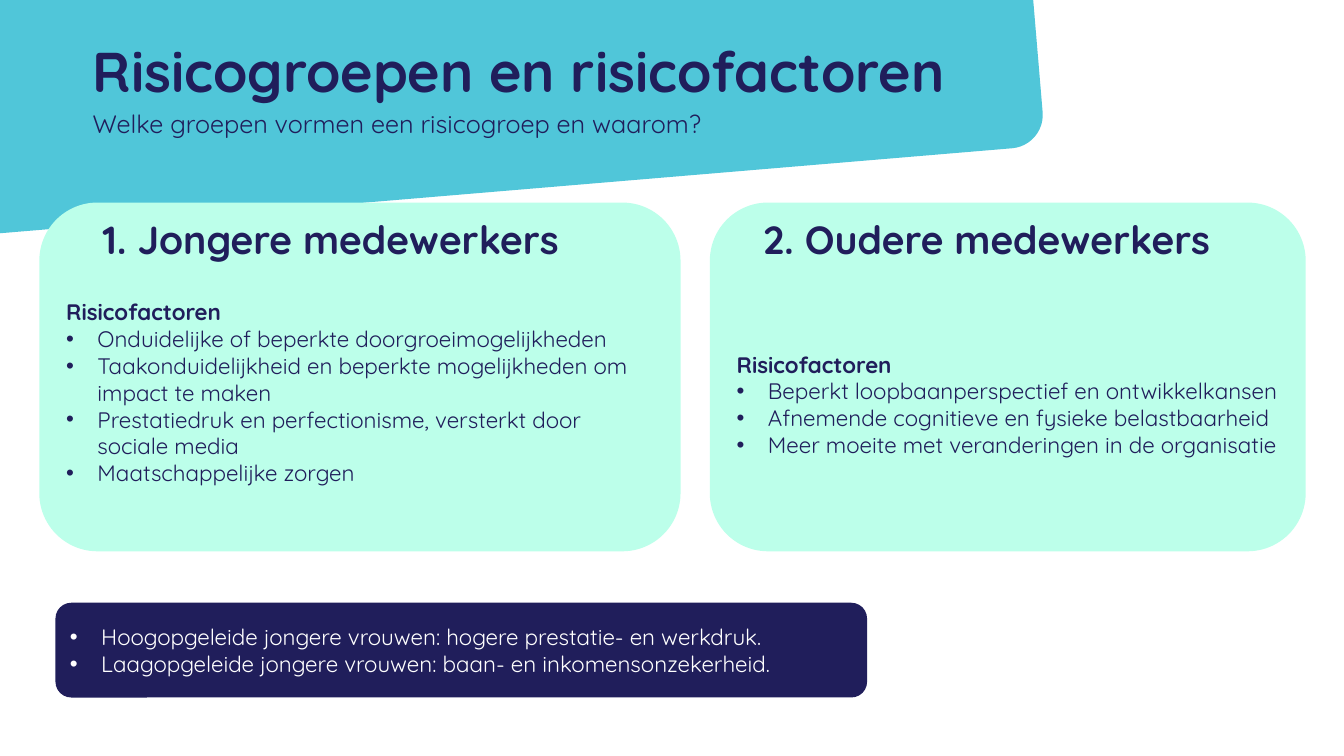
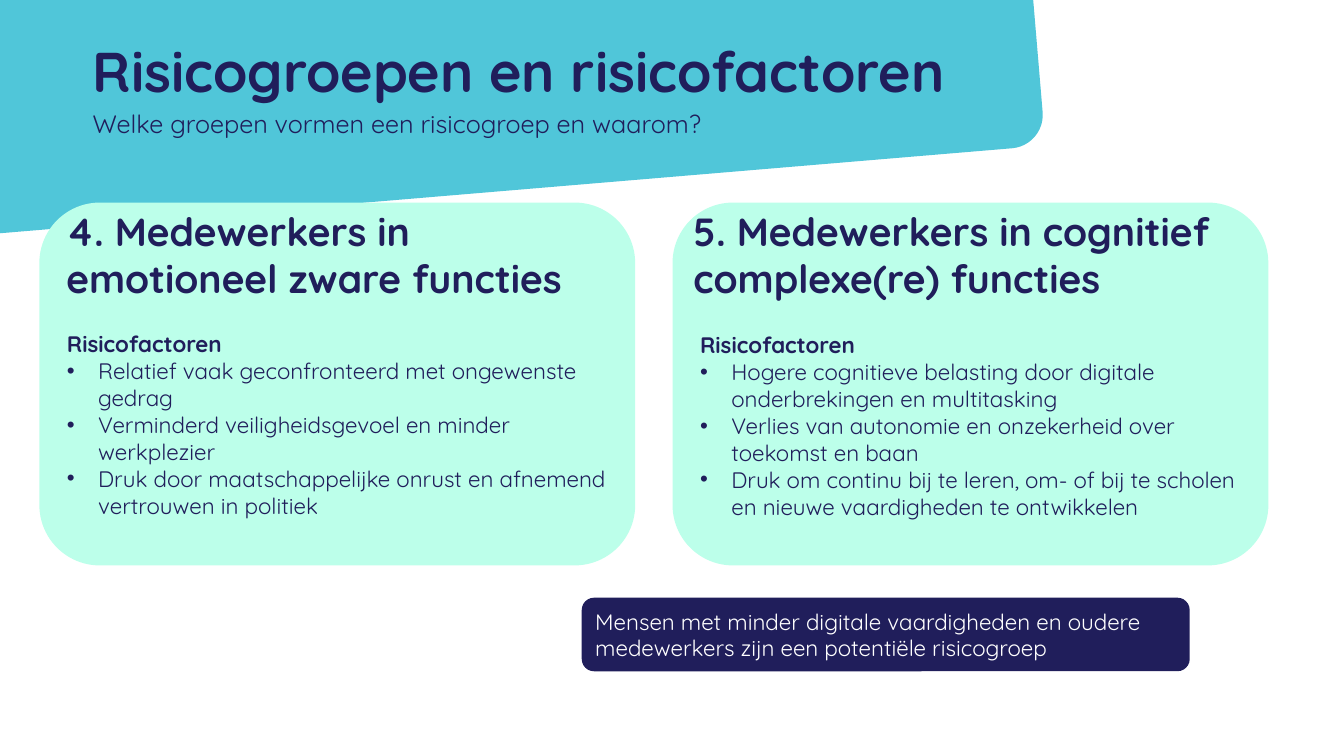
from lxml import etree
from pptx import Presentation
from pptx import util as u
from pptx.dml.color import RGBColor
from pptx.enum import shapes, text
from pptx.oxml import ns

NAVY, TEAL, MINT, WHITE = "201E5B", "50C6D9", "BCFFEA", "FFFFFF"
FACE = "Quicksand"
TITLE = "Risicogroepen en risicofactoren"
LEAD = "Welke groepen vormen een risicogroep en waarom?"
LEFT, CENTER = text.PP_ALIGN.LEFT, text.PP_ALIGN.CENTER
CORNER = 1 / 6  # default corner radius, as a share of the short side


def color(code):
    return RGBColor.from_string(code)


def place(shape, box):
    shape.left, shape.top, shape.width, shape.height = map(u.Inches, box)


def bullet(para):
    props = para._p.get_or_add_pPr()
    props.set("marL", str(u.Inches(0.31)))
    props.set("indent", str(u.Inches(-0.31)))
    etree.SubElement(props, ns.qn("a:buFont")).set("typeface", "Arial")
    etree.SubElement(props, ns.qn("a:buChar")).set("char", "•")


def style(para, size, tint=NAVY, bold=False, align=LEFT):
    para.alignment = align
    font = para.font
    font.name, font.size, font.bold = FACE, u.Pt(size), bold
    font.color.rgb = color(tint)


def setup(frame, anchor, inset=None):
    frame.word_wrap = True
    frame.auto_size = text.MSO_AUTO_SIZE.NONE
    frame.vertical_anchor = anchor
    if inset is not None:
        frame.margin_left = frame.margin_right = u.Inches(inset)
        frame.margin_top = frame.margin_bottom = u.Inches(inset)


def write(frame, lines, bullets=True, **look):
    """Fill the frame with lines, one paragraph each."""
    for i, line in enumerate(lines):
        para = frame.paragraphs[0] if i == 0 else frame.add_paragraph()
        para.text = line
        if bullets:
            bullet(para)
        style(para, **look)


def block(slide, box, fill):
    """Rounded block without line or shadow."""
    shape = slide.shapes.add_shape(
        shapes.MSO_SHAPE.ROUNDED_RECTANGLE, *map(u.Inches, box))
    shape.shadow.inherit = False
    shape.fill.solid()
    shape.fill.fore_color.rgb = color(fill)
    shape.line.fill.background()
    return shape


def label(slide, box, line, inset=None, **look):
    area = slide.shapes.add_textbox(*map(u.Inches, box))
    setup(area.text_frame, text.MSO_ANCHOR.TOP, inset)
    write(area.text_frame, [line], bullets=False, **look)
    return area


def header(slide):
    """Tilted band with title and lead line."""
    title = slide.shapes.title
    place(title, (0.92, 0.36, 11.5, 0.79))
    setup(title.text_frame, text.MSO_ANCHOR.TOP, 0)
    write(title.text_frame, [TITLE], bullets=False, size=40, bold=True)

    band = block(slide, (-1, -0.92, 11.27, 2.84), TEAL)
    band.adjustments[0] = 0.117
    band.rotation = 355.2
    title.element.addprevious(band.element)  # band goes behind the title

    lead = label(slide, (0.92, 1.11, 11.5, 0.79), LEAD, inset=0, size=18)
    lead.text_frame.paragraphs[0].line_spacing = 0.9


def panel(slide, box, drop, risks, head, spot, align=LEFT):
    """Risk group: drop is the gap above the list, spot the heading's box
    relative to the panel."""
    x, y, _, h = box
    frame = block(slide, box, MINT).text_frame
    setup(frame, text.MSO_ANCHOR.TOP)
    # The text area of a rounded block starts inside its corner arc
    frame.margin_top = u.Inches(drop - h * CORNER * (1 - 0.5 ** 0.5))
    write(frame, ["Risicofactoren"], bullets=False, size=16, bold=True)
    for risk in risks:
        para = frame.add_paragraph()
        para.text = risk
        bullet(para)
        style(para, 16)
    dx, dy, wide, high = spot
    label(slide, (x + dx, y + dy, wide, high), head,
          size=28, bold=True, align=align)


def note(slide, box, lines, bullets):
    """Dark remark box."""
    frame = block(slide, box, NAVY).text_frame
    setup(frame, text.MSO_ANCHOR.MIDDLE)
    write(frame, lines, bullets, size=16, tint=WHITE)


def page(deck, panels, remark):
    slide = deck.slides.add_slide(deck.slide_layouts[5])
    header(slide)
    for group in panels:
        panel(slide, **group)
    note(slide, **remark)


PAGES = [
    ([dict(box=(0.39, 2.01, 6.36, 3.46), drop=0.95,
           head="1. Jongere medewerkers",
           spot=(0.13, 0.08, 5.52, 0.57), align=CENTER,
           risks=["Onduidelijke of beperkte doorgroeimogelijkheden",
                  "Taakonduidelijkheid en beperkte mogelijkheden om "
                  "impact te maken",
                  "Prestatiedruk en perfectionisme, versterkt door "
                  "sociale media",
                  "Maatschappelijke zorgen"]),
      dict(box=(7.04, 2.01, 5.91, 3.46), drop=1.47,
           head="2. Oudere medewerkers",
           spot=(0.3, 0.08, 4.89, 0.57), align=CENTER,
           risks=["Beperkt loopbaanperspectief en ontwikkelkansen",
                  "Afnemende cognitieve en fysieke belastbaarheid",
                  "Meer moeite met veranderingen in de organisatie"])],
     dict(box=(0.55, 5.98, 8.05, 0.94), bullets=True,
          lines=["Hoogopgeleide jongere vrouwen: hogere prestatie- en "
                 "werkdruk.",
                 "Laagopgeleide jongere vrouwen: baan- en "
                 "inkomensonzekerheid."])),
    ([dict(box=(0.39, 2.01, 5.91, 3.6), drop=1.27,
           head="4. Medewerkers in emotioneel zware functies",
           spot=(0.17, 0, 5.56, 1.04),
           risks=["Relatief vaak geconfronteerd met ongewenste gedrag",
                  "Verminderd veiligheidsgevoel en minder werkplezier",
                  "Druk door maatschappelijke onrust en afnemend "
                  "vertrouwen in politiek"]),
      dict(box=(6.67, 2.01, 5.91, 3.6), drop=1.28,
           head="5. Medewerkers in cognitief complexe(re) functies",
           spot=(0.11, 0, 6, 1.04),
           risks=["Hogere cognitieve belasting door digitale "
                  "onderbrekingen en multitasking",
                  "Verlies van autonomie en onzekerheid over toekomst "
                  "en baan",
                  "Druk om continu bij te leren, om- of bij te scholen "
                  "en nieuwe vaardigheden te ontwikkelen"])],
     dict(box=(5.77, 5.93, 6.03, 0.73), bullets=False,
          lines=["Mensen met minder digitale vaardigheden en oudere "
                 "medewerkers zijn een potentiële risicogroep"])),
]


def main():
    deck = Presentation()
    deck.slide_width, deck.slide_height = u.Inches(13.33), u.Inches(7.5)
    for panels, remark in PAGES:
        page(deck, panels, remark)
    deck.save("out.pptx")


if __name__ == "__main__":
    main()
